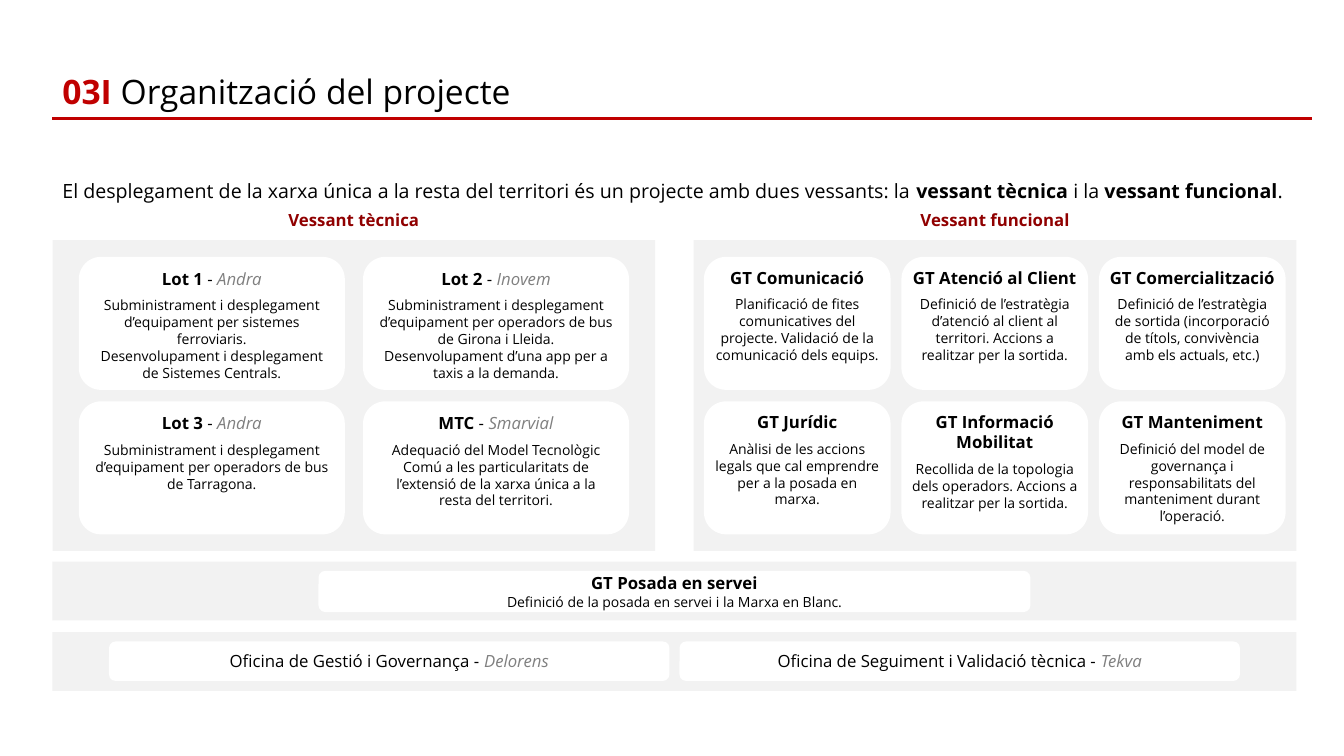
"""Builds the slide on how the project is organised into technical and functional sides."""
from pptx import Presentation
from pptx.dml.color import RGBColor
from pptx.enum.shapes import MSO_CONNECTOR as Connector, MSO_SHAPE as Shape
from pptx.enum.text import MSO_ANCHOR as Anchor, PP_ALIGN as Align
from pptx.util import Pt
from lxml import etree

FONT = "Open Sans"
BLACK, WHITE, PANEL = "000000", "FFFFFF", "F2F2F2"
RED, DARK_RED, GREY = "C00000", "900000", "808080"
DRAWING = "http://schemas.openxmlformats.org/drawingml/2006/main"

STYLES = {
    "plain": {},
    "bold": {"bold": True},
    "number": {"bold": True, "color": RED},
    "heading": {"bold": True, "color": DARK_RED},
    "company": {"italic": True, "color": GREY},
}

TITLE = [("03I ", "number"), ("Organització del projecte", "plain")]
INTRO = [
    ("El desplegament de la xarxa única a la resta del territori és un projecte amb dues vessants: la ", "plain"),
    ("vessant tècnica ", "bold"),
    ("i la ", "plain"),
    ("vessant funcional", "bold"),
    (".", "plain"),
]
LOTS = [
    ("Lot 1", "Andra", "Subministrament i desplegament d’equipament per sistemes ferroviaris.\n"
     "Desenvolupament i desplegament de Sistemes Centrals."),
    ("Lot 2", "Inovem", "Subministrament i desplegament d’equipament per operadors de bus de Girona i Lleida.\n"
     "Desenvolupament d’una app per a taxis a la demanda."),
    ("Lot 3", "Andra", "Subministrament i desplegament d’equipament per operadors de bus de Tarragona."),
    ("MTC", "Smarvial", "Adequació del Model Tecnològic Comú a les particularitats de l’extensió "
     "de la xarxa única a la resta del territori."),
]
GROUPS = [
    ("GT Comunicació", "Planificació de fites comunicatives del projecte. Validació de la comunicació dels equips."),
    ("GT Atenció al Client", "Definició de l’estratègia d’atenció al client al territori. "
     "Accions a realitzar per la sortida."),
    ("GT Comercialització", "Definició de l’estratègia de sortida (incorporació de títols, "
     "convivència amb els actuals, etc.)"),
    ("GT Jurídic", "Anàlisi de les accions legals que cal emprendre per a la posada en marxa."),
    ("GT Informació Mobilitat", "Recollida de la topologia dels operadors. Accions a realitzar per la sortida."),
    ("GT Manteniment", "Definició del model de governança i responsabilitats del manteniment durant l’operació."),
]
LAUNCH = ("GT Posada en servei", "Definició de la posada en servei i la Marxa en Blanc.")
OFFICES = [("Oficina de Gestió i Governança", "Delorens"), ("Oficina de Seguiment i Validació tècnica", "Tekva")]

LEFT, FULL_WIDTH = 37.5, 888.5
PANEL_TOP, PANEL_WIDTH, PANEL_HEIGHT = 171.5, 430.5, 222
CARD_TOP, CARD_HEIGHT, CARD_STEP = 183.5, 95, 103.2
SIDES = [
    {"heading": "Vessant tècnica", "left": LEFT, "columns": 2, "card_left": 56.3, "width": 190,
     "step": 203, "inset": None,
     "cards": [([(name, "bold"), (" - ", "plain"), (company, "company")], text) for name, company, text in LOTS]},
    {"heading": "Vessant funcional", "left": 495.5, "columns": 3, "card_left": 502.8, "width": 133.3,
     "step": 141.1, "inset": 2.9,
     "cards": [([(name, "bold")], text) for name, text in GROUPS]},
]

deck = Presentation()
deck.slide_width, deck.slide_height = Pt(960), Pt(540)
page = deck.slides.add_slide(deck.slide_layouts[6])


def rgb(value):
    return RGBColor.from_string(value)


def write(box, lines, align=Align.CENTER, anchor=Anchor.MIDDLE, inset=None, gap=0):
    frame = box.text_frame
    frame.word_wrap = True
    frame.vertical_anchor = anchor
    if inset is not None:
        frame.margin_left = frame.margin_right = frame.margin_top = frame.margin_bottom = Pt(inset)
    for index, (size, content) in enumerate(lines):
        para = frame.paragraphs[0] if index == 0 else frame.add_paragraph()
        para.alignment = align
        if index and gap:
            para.space_before = Pt(gap)
        para.font.name, para.font.size = FONT, Pt(size)
        para.font.color.rgb = rgb(BLACK)
        if isinstance(content, str):
            para.text = content
            continue
        for text, style in content:
            span = para.add_run()
            span.text = text
            look = STYLES[style]
            span.font.bold = look.get("bold")
            span.font.italic = look.get("italic")
            if "color" in look:
                span.font.color.rgb = rgb(look["color"])


def add_text(left, top, width, height, lines, **options):
    write(page.shapes.add_textbox(Pt(left), Pt(top), Pt(width), Pt(height)), lines, **options)


def add_block(kind, left, top, width, height, fill):
    block = page.shapes.add_shape(kind, Pt(left), Pt(top), Pt(width), Pt(height))
    block.shadow.inherit = False
    block.fill.solid()
    block.fill.fore_color.rgb = rgb(fill)
    block.line.fill.background()
    return block


def add_card(left, top, width, height, lines, **options):
    write(add_block(Shape.ROUNDED_RECTANGLE, left, top, width, height, WHITE), lines, **options)


def add_rule(left, top, right):
    rule = page.shapes.add_connector(Connector.STRAIGHT, Pt(left), Pt(top), Pt(right), Pt(top))
    rule.line.color.rgb = rgb(RED)
    rule.line.width = Pt(2.25)
    etree.SubElement(rule._element.spPr, f"{{{DRAWING}}}effectLst")


def add_side(side):
    add_text(side["left"] + (PANEL_WIDTH - 131) / 2, 147, 131, 20, [(12, [(side["heading"], "heading")])])
    add_block(Shape.RECTANGLE, side["left"], PANEL_TOP, PANEL_WIDTH, PANEL_HEIGHT, PANEL)
    for index, (name, text) in enumerate(side["cards"]):
        row, column = divmod(index, side["columns"])
        add_card(side["card_left"] + column * side["step"], CARD_TOP + row * CARD_STEP,
                 side["width"], CARD_HEIGHT, [(12, name), (10, text)],
                 anchor=Anchor.TOP, inset=side["inset"], gap=6)


add_rule(LEFT, 84.5, 937.5)
add_text(LEFT, 45.5, 900, 39.5, [(24, TITLE)], align=Align.LEFT)
add_text(LEFT, 124.5, FULL_WIDTH, 26, [(14, INTRO)], align=Align.LEFT, anchor=Anchor.TOP)
for side in SIDES:
    add_side(side)
for band_top in (401.2, 451.5):
    add_block(Shape.RECTANGLE, LEFT, band_top, FULL_WIDTH, 42, PANEL)
add_card(227.5, 407.7, 508.5, 29.5, [(12, [(LAUNCH[0], "bold")]), (10, LAUNCH[1])], inset=2.9)
for index, (office, company) in enumerate(OFFICES):
    add_card(77.9 + index * 407.5, 458.2, 400.3, 28.2,
             [(12, [(f"{office} - ", "plain"), (company, "company")])])

deck.save("out.pptx")
